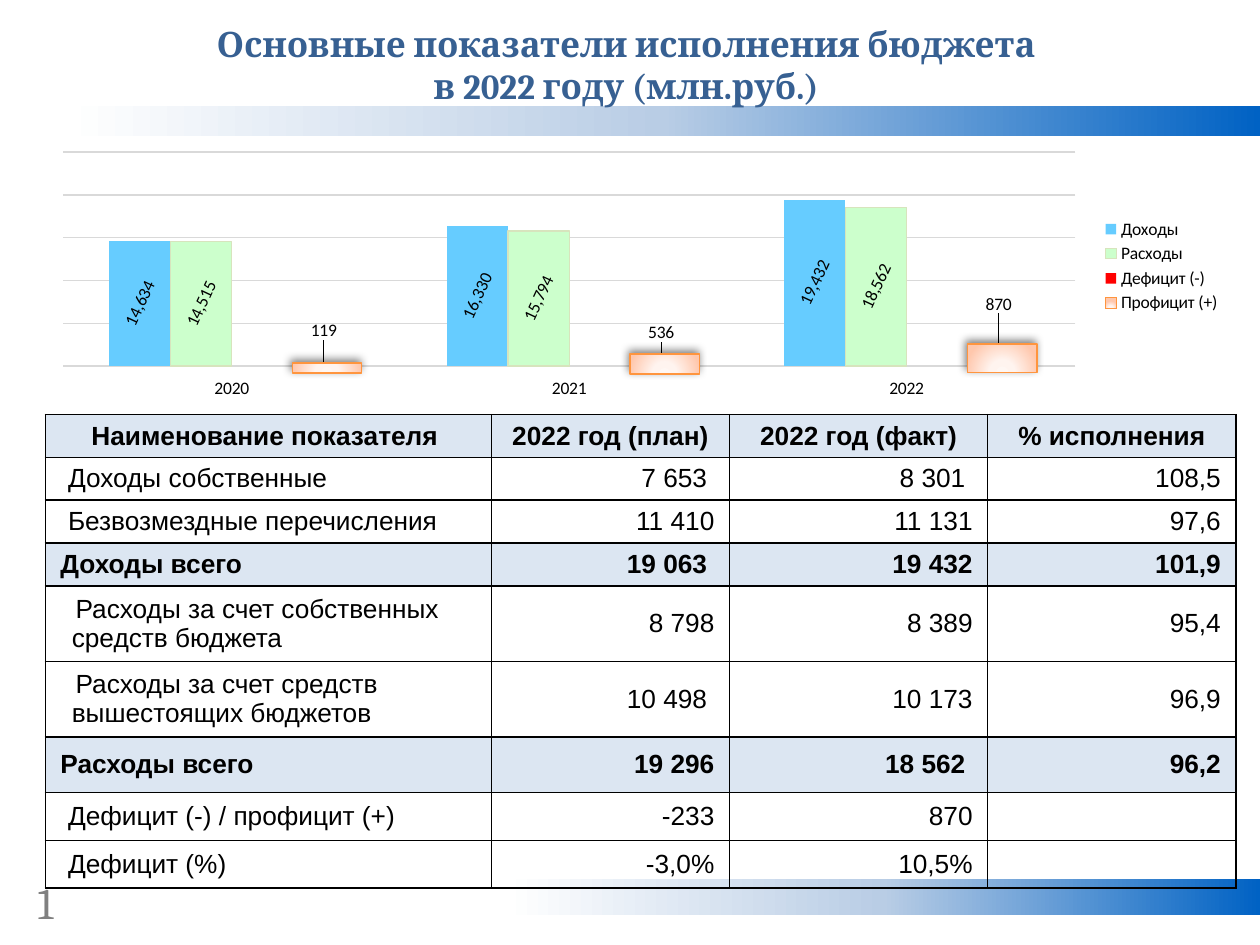
from dataclasses import dataclass

from lxml.etree import SubElement as add_child
from pptx import Presentation
from pptx.chart.data import CategoryChartData as ChartData
from pptx.dml.color import RGBColor as Color
from pptx.enum.chart import XL_CHART_TYPE as ChartType
from pptx.enum.chart import XL_LABEL_POSITION as LabelPosition
from pptx.enum.chart import XL_LEGEND_POSITION as LegendPosition
from pptx.enum.chart import XL_TICK_LABEL_POSITION as TickLabel
from pptx.enum.chart import XL_TICK_MARK as TickMark
from pptx.enum.shapes import MSO_SHAPE as ShapeKind
from pptx.enum.text import MSO_ANCHOR as Anchor
from pptx.enum.text import PP_ALIGN as Align
from pptx.oxml.ns import qn
from pptx.util import Inches, Pt


@dataclass(frozen=True)
class Theme:
    """Colours, fonts and type sizes of the slide."""

    heading_font: str = "Cambria"
    table_font: str = "Arial"
    chart_font: str = "Calibri"
    heading_size: float = 20
    number_size: float = 25
    table_size: float = 15
    chart_size: float = 10
    heading: str = "376092"
    number: str = "808080"
    text: str = "000000"
    shade: str = "DCE6F2"
    grid: str = "D9D9D9"
    frame: str = "FFFFFF"
    income: str = "66CCFF"
    expense: str = "CCFFCC"
    expense_line: str = "D7E4BD"
    deficit: str = "FF0000"
    surplus_line: str = "FF953E"
    band: tuple = ((0, "0062C4"), (50, "B9CDE5"), (100, "FFFFFF"))
    surplus: tuple = ((0, "FFF7F3"), (34, "FFF4EF"), (100, "FFC7AC"))


def write_text(paragraph, text, *, font, size, color, bold=False, align=Align.LEFT):
    """Put formatted text into a paragraph."""
    paragraph.alignment = align
    run = paragraph.add_run()
    run.text = text
    run.font.name, run.font.size, run.font.bold = font, Pt(size), bold
    run.font.color.rgb = Color.from_string(color)


def paint(fill, color):
    """Fill with one solid colour."""
    fill.solid()
    fill.fore_color.rgb = Color.from_string(color)


def draw_line(line, color):
    """Give a line its colour and the common thin width."""
    paint(line.fill, color)
    line.width = Pt(0.75)


def shade(fill, properties, stops, radial=False):
    """Fill with a right-to-left or radial gradient."""
    fill.solid()
    gradient = properties.makeelement(qn("a:gradFill"), {"rotWithShape": "1"})
    stop_list = add_child(gradient, qn("a:gsLst"))
    for position, color in stops:
        stop = add_child(stop_list, qn("a:gs"), pos=str(position * 1000))
        add_child(stop, qn("a:srgbClr"), val=color)
    if radial:
        circle = add_child(gradient, qn("a:path"), {"path": "circle"})
        add_child(circle, qn("a:fillToRect"), l="50000", t="155000", r="50000", b="-55000")
    else:
        add_child(gradient, qn("a:lin"), ang="10800000", scaled="0")
    properties.replace(properties.find(qn("a:solidFill")), gradient)


def set_layout(layout, **values):
    """Write a manual chart layout."""
    manual = add_child(layout, qn("c:manualLayout"))
    for name, value in values.items():
        add_child(manual, qn(f"c:{name}"), val=str(value))


class BudgetSlide:
    """Draws the elements of the budget slide in one theme."""

    def __init__(self, slide, theme):
        self.slide, self.theme = slide, theme

    def text(self, box, lines, **style):
        """Add a text box with one paragraph per line."""
        frame = self.slide.shapes.add_textbox(*map(Inches, box)).text_frame
        frame.word_wrap = True
        for index, line in enumerate(lines):
            paragraph = frame.add_paragraph() if index else frame.paragraphs[0]
            write_text(paragraph, line, font=self.theme.heading_font, **style)

    def rectangle(self, box, stops, radial=False):
        """Add a gradient rectangle without line or shadow."""
        shape = self.slide.shapes.add_shape(ShapeKind.RECTANGLE, *map(Inches, box))
        shape.shadow.inherit = False
        shade(shape.fill, shape._element.spPr, stops, radial)
        shape.line.fill.background()
        return shape

    def surplus_bar(self, box):
        """Add a surplus bar with an outline and a soft shadow."""
        shape = self.rectangle(box, self.theme.surplus, radial=True)
        draw_line(shape.line, self.theme.surplus_line)
        effects = shape._element.spPr.find(qn("a:effectLst"))
        shadow = add_child(effects, qn("a:outerShdw"), blurRad=str(Pt(5)),
                           dist=str(Pt(2)), dir=str(245 * 60000), rotWithShape="0")
        color = add_child(shadow, qn("a:srgbClr"), val=self.theme.text)
        add_child(color, qn("a:alpha"), val="50000")

    def table(self, box, columns, rows):
        """Add a table from rows of height, shading, indent level and cell texts."""
        theme = self.theme
        table = self.slide.shapes.add_table(len(rows), len(columns), *map(Inches, box)).table
        table.first_row = table.horz_banding = False
        for column, width in zip(table.columns, columns):
            column.width = Inches(width)
        for row_index, (height, shaded, level, texts) in enumerate(rows):
            table.rows[row_index].height = Inches(height)
            for column_index, text in enumerate(texts):
                cell = table.cell(row_index, column_index)
                cell.vertical_anchor = Anchor.MIDDLE
                cell.margin_left = cell.margin_right = Inches(0.12)
                cell.margin_top = cell.margin_bottom = Inches(0.04)
                paint(cell.fill, theme.shade) if shaded else cell.fill.background()
                self.border(cell)
                paragraph = cell.text_frame.paragraphs[0]
                align = Align.RIGHT if column_index else Align.LEFT
                write_text(paragraph, text, font=theme.table_font, size=theme.table_size,
                           color=theme.text, bold=shaded,
                           align=align if row_index else Align.CENTER)
                if row_index and not column_index:
                    properties = paragraph._p.get_or_add_pPr()
                    properties.set("marL", str(Inches(0.09)))
                    properties.set("indent", str(Inches(0.06 * level - 0.09)))

    def border(self, cell):
        """Draw all four borders of a cell."""
        properties = cell._tc.get_or_add_tcPr()
        for index, side in enumerate("LRTB"):
            line = properties.makeelement(qn(f"a:ln{side}"), {"w": str(Pt(1))})
            add_child(add_child(line, qn("a:solidFill")), qn("a:srgbClr"), val=self.theme.text)
            properties.insert(index, line)

    def chart(self, box, years, values, label_shifts):
        """Add the clustered column chart of the budget."""
        theme = self.theme
        data = ChartData(number_format="#,##0")
        data.categories = years
        for name, numbers in values.items():
            data.add_series(name, numbers)
        frame = self.slide.shapes.add_chart(ChartType.COLUMN_CLUSTERED, *map(Inches, box), data)
        chart = frame.chart
        chart.has_title = False
        chart.font.name, chart.font.size = theme.chart_font, Pt(theme.chart_size)
        chart.font.color.rgb = Color.from_string(theme.text)
        chart.has_legend = True
        chart.legend.position, chart.legend.include_in_layout = LegendPosition.RIGHT, False

        category_axis, value_axis = chart.category_axis, chart.value_axis
        category_axis.tick_label_position = TickLabel.LOW
        category_axis.major_tick_mark = TickMark.NONE
        category_axis.format.line.fill.background()
        value_axis.minimum_scale, value_axis.maximum_scale = 0, 25000
        value_axis.major_unit, value_axis.visible = 5000, False
        draw_line(value_axis.major_gridlines.format.line, theme.grid)

        plot = chart.plots[0]
        plot.gap_width, plot.overlap, plot.vary_by_categories = 150, 0, False
        income, expense, deficit, surplus = plot.series
        for series, color in ((income, theme.income), (expense, theme.expense),
                              (deficit, theme.deficit)):
            paint(series.format.fill, color)
        draw_line(expense.format.line, theme.expense_line)
        shade(surplus.format.fill, surplus._element.find(qn("c:spPr")), theme.surplus, radial=True)
        draw_line(surplus.format.line, theme.surplus_line)
        for series in plot.series:
            upright = series.name in (deficit.name, surplus.name)
            labels = series.data_labels
            labels.show_value = True
            labels.position = LabelPosition.INSIDE_BASE if upright else LabelPosition.CENTER
            labels.font.size = Pt(theme.chart_size)
            if not upright:
                labels._element.find(f".//{qn('a:bodyPr')}").set("rot", str(-65 * 60000))
        for index, shift in enumerate(label_shifts):
            surplus.points[index].data_label.position = LabelPosition.INSIDE_BASE
            label = surplus._element.findall(f".//{qn('c:dLbl')}")[index]
            layout = label.makeelement(qn("c:layout"), {})
            label.insert(1, layout)
            set_layout(layout, x=0, y=shift)

        area = chart._chartSpace.chart.plotArea
        layout = area.find(qn("c:layout"))
        if layout is None:
            layout = area.makeelement(qn("c:layout"), {})
            area.insert(0, layout)
        set_layout(layout, layoutTarget="inner", xMode="edge", yMode="edge",
                   x=0.016, y=0.066, w=0.851, h=0.815)


def main():
    """Build the slide and save it."""
    presentation = Presentation()
    presentation.slide_width, presentation.slide_height = Inches(10), Inches(7.5)
    theme = Theme()
    page = BudgetSlide(presentation.slides.add_slide(presentation.slide_layouts[6]), theme)
    page.rectangle((0.51, 0.84, 9.49, 0.24), theme.band)
    page.rectangle((4.01, 6.98, 5.99, 0.28), theme.band)
    page.text((0.2, 6.9, 0.39, 0.52), ["1"], size=theme.number_size, color=theme.number)
    page.table((0.36, 3.29, 9.44, 3.65), (3.54, 1.89, 2.05, 1.97), [
        (0.34, True, 0, ("Наименование показателя ", "2022 год (план)", "2022 год (факт)", "% исполнения")),
        (0.34, False, 1, ("Доходы собственные", "7 653 ", "8 301 ", "108,5")),
        (0.34, False, 1, ("Безвозмездные перечисления", "11 410", "11 131", "97,6")),
        (0.34, True, 0, ("Доходы всего", "19 063 ", "19 432", "101,9")),
        (0.6, False, 2, ("Расходы за счет собственных средств бюджета", "8 798", "8 389", "95,4")),
        (0.6, False, 2, ("Расходы за счет средств вышестоящих бюджетов", "10 498 ", "10 173", "96,9")),
        (0.44, True, 0, ("Расходы всего", "19 296", "18 562 ", "96,2")),
        (0.34, False, 1, ("Дефицит (-) / профицит (+)", "-233", "870", "")),
        (0.34, False, 1, ("Дефицит (%)", "-3,0%", "10,5%", "")),
    ])
    page.text((0, 0.13, 10, 0.77),
              ["Основные показатели исполнения бюджета ", "в 2022 году (млн.руб.) "],
              size=theme.heading_size, color=theme.heading, bold=True, align=Align.CENTER)
    page.chart((0.35, 1.07, 9.44, 2.09), ("2020", "2021", "2022"), {
        "Доходы": (14634, 16330, 19432),
        "Расходы": (14515, 15794, 18562),
        "Дефицит (-)": (None, None, None),
        "Профицит (+)": (119, 536, 870),
    }, (-0.08, -0.07, -0.18))
    for index, (top, height) in enumerate(((2.88, 0.08), (2.81, 0.16), (2.73, 0.23))):
        page.surplus_bar((2.32 + 2.68 * index, top, 0.55, height))
    presentation.save("out.pptx")


if __name__ == "__main__":
    main()
